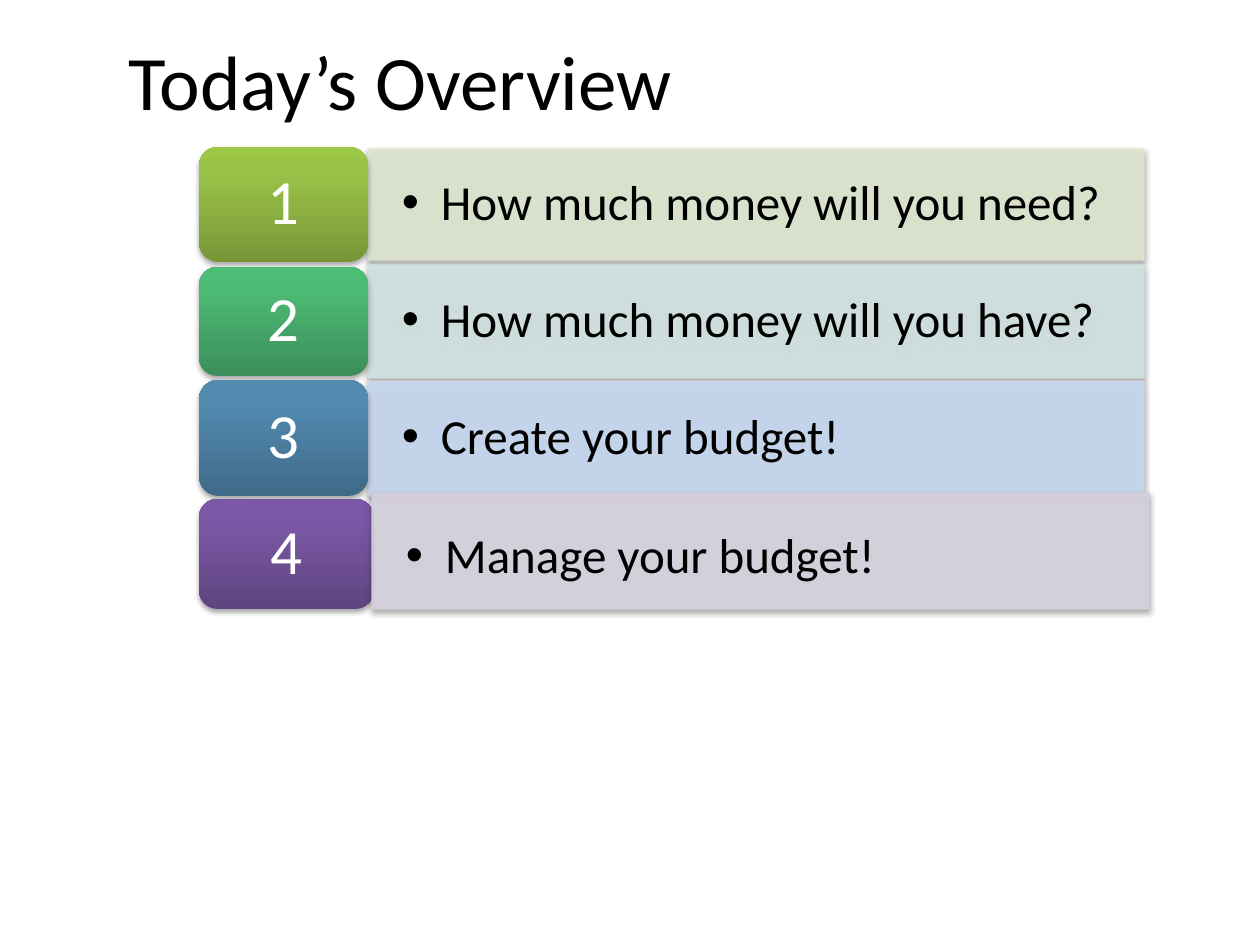
from lxml import etree
from pptx import Presentation
from pptx import util as u
from pptx.dml.color import RGBColor
from pptx.enum import shapes, text
from pptx.oxml.ns import qn

PX = 914400 // 126
BLACK = RGBColor(0, 0, 0)
WHITE = RGBColor(255, 255, 255)
GREEN = [RGBColor.from_string(c) for c in ("779737", "9BC348", "9DC746")]
TEAL = [RGBColor.from_string(c) for c in ("3B8F5A", "4DBA75", "4BBD75")]
BLUE = [RGBColor.from_string(c) for c in ("3F6A88", "528AB0", "518BB3")]
PURPLE = [RGBColor.from_string(c) for c in ("5F4480", "7B58A6", "7C57A8")]
PALE_GREEN = RGBColor(0xDE, 0xE7, 0xD1)
PALE_TEAL = RGBColor(0xD2, 0xE3, 0xE2)
PALE_BLUE = RGBColor(0xC6, 0xD9, 0xF1)
PALE_PURPLE = RGBColor(0xD8, 0xD3, 0xE0)
PURPLE_EDGE = RGBColor(0xD3, 0xCE, 0xDB)


def add(parent, tag, **attrs):
    return etree.SubElement(parent, qn(tag), attrs)


def set_alpha(fill_parent, percent):
    color = fill_parent.find(f"{qn('a:solidFill')}/{qn('a:srgbClr')}")
    add(color, "a:alpha", val=str(percent * 1000))


def add_shadow(sp):
    sp.shadow.inherit = False
    effects = sp._element.spPr.find(qn("a:effectLst"))
    shadow = add(effects, "a:outerShdw", blurRad="40000", dist="23000",
                 dir="5400000", rotWithShape="0")
    add(add(shadow, "a:srgbClr", val="000000"), "a:alpha", val="35000")


def add_box(s, kind, box):
    return s.shapes.add_shape(kind, *(v * PX for v in box))


def write(sp, words, size, color, align, margins):
    tf = sp.text_frame
    p = tf.paragraphs[0]
    left, top, right, bottom = (v * PX for v in margins)
    frame = {"word_wrap": True, "vertical_anchor": text.MSO_ANCHOR.MIDDLE,
             "margin_left": left, "margin_top": top,
             "margin_right": right, "margin_bottom": bottom}
    for name, value in frame.items():
        setattr(tf, name, value)
    p.alignment = align
    r = p.add_run()
    r.text = words
    for name, value in {"name": "Calibri", "size": u.Pt(size)}.items():
        setattr(r.font, name, value)
    r.font.color.rgb = color
    return p


def add_title(s, box, words):
    sp = s.shapes.title
    sp.left, sp.top, sp.width, sp.height = (v * PX for v in box)
    write(sp, words, 44, BLACK, text.PP_ALIGN.LEFT, (13, 6, 13, 6))


def add_number(s, box, number, colors):
    sp = add_box(s, shapes.MSO_SHAPE.ROUNDED_RECTANGLE, box)
    sp.fill.gradient()
    sp.fill.gradient_angle = 90
    stops = sp._element.spPr.find(f"{qn('a:gradFill')}/{qn('a:gsLst')}")
    for stop in list(stops):
        stops.remove(stop)
    for position, color in zip((0, 80, 100), colors):
        stop = add(stops, "a:gs", pos=str(position * 1000))
        add(stop, "a:srgbClr", val=str(color))
    sp.line.fill.background()
    add_shadow(sp)
    p = write(sp, str(number), 36, WHITE, text.PP_ALIGN.CENTER, (19, 9, 19, 9))
    p.line_spacing = 0.9


def add_band(s, box, words, fill, edge, drop):
    sp = add_box(s, shapes.MSO_SHAPE.RECTANGLE, box)
    sp.fill.solid()
    sp.fill.fore_color.rgb = fill
    sp.line.color.rgb = edge
    sp.line.width = u.Pt(0.75)
    set_alpha(sp._element.spPr, 90)
    set_alpha(sp.line._ln, 90)
    add_shadow(sp)
    p = write(sp, words, 28, BLACK, text.PP_ALIGN.LEFT, (34, 18 + 2 * drop, 34, 18))
    pPr = p._p.get_or_add_pPr()
    pPr.set("marL", str(39 * PX))
    pPr.set("indent", str(-39 * PX))
    add(pPr, "a:buFont", typeface="Arial")
    add(pPr, "a:buChar", char="•")
    p.line_spacing = 0.9


def add_agenda(s, left, top):
    rows = [
        ("How much money will you need?", GREEN, PALE_GREEN, PALE_GREEN,
         (0, 0, 169, 115), (169, 2, 776, 111), 0),
        ("How much money will you have?", TEAL, PALE_TEAL, PALE_TEAL,
         (0, 120, 169, 109), (169, 118, 776, 113), 0),
        ("Create your budget!", BLUE, PALE_BLUE, PALE_PURPLE,
         (0, 233, 169, 116), (169, 234, 776, 115), 0),
        ("Manage your budget!", PURPLE, PALE_PURPLE, PURPLE_EDGE,
         (0, 352, 175, 110), (173, 346, 777, 116), 7),
    ]
    for i, (words, colors, fill, edge, tile, band, drop) in enumerate(rows, 1):
        tile_box, band_box = ((left + x, top + y, w, h) for x, y, w, h in (tile, band))
        parts = [(add_band, (band_box, words, fill, edge, drop)),
                 (add_number, (tile_box, i, colors))]
        if i == len(rows):
            parts.reverse()
        for draw, args in parts:
            draw(s, *args)


def main():
    prs = Presentation()
    prs.slide_width, prs.slide_height = u.Inches(10), u.Inches(7.5)
    s = prs.slides.add_slide(prs.slide_layouts[5])
    add_title(s, (116, 1, 1113, 158), "Today’s Overview")
    add_agenda(s, 199, 147)
    prs.save("out.pptx")


if __name__ == "__main__":
    main()
